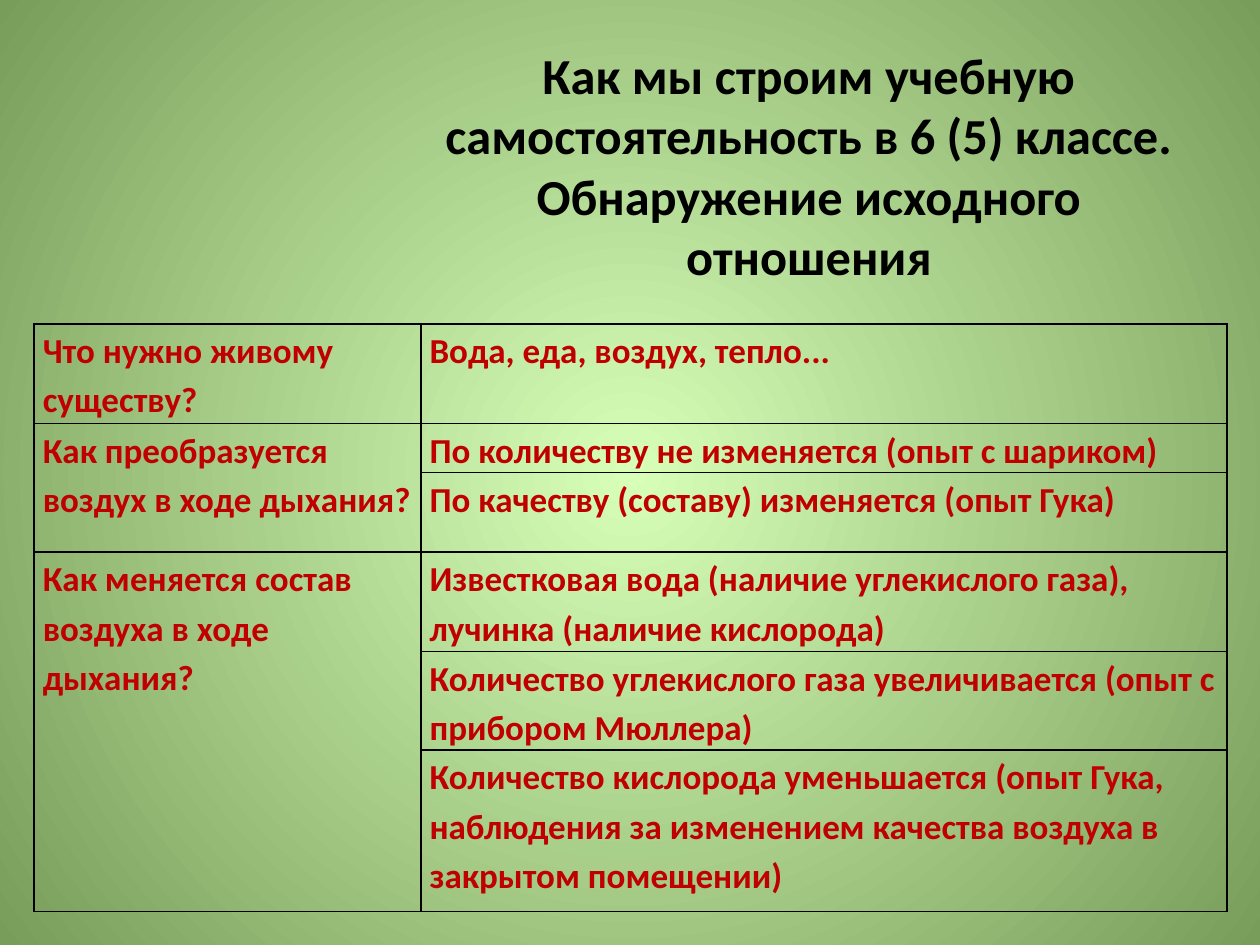
from lxml.etree import SubElement
from pptx import Presentation
from pptx.dml.color import RGBColor
from pptx.enum.text import MSO_ANCHOR, MSO_AUTO_SIZE, PP_ALIGN
from pptx.oxml.ns import qn
from pptx.util import Inches, Pt

COLORS = {"center": "D7FFB8", "edge": "789D5B", "title": "000000",
          "cell": "C00000", "border": "000000"}
FONT = "Calibri"
COL_WIDTHS = [3.07, 6.4]
ROW_HEIGHTS = [0.79, 0.39, 0.63, 0.79, 0.78, 1.28]
# Each question spans as many rows as it has answers.
TOPICS = [
    ("Что нужно живому существу?", ["Вода, еда, воздух, тепло..."]),
    ("Как преобразуется воздух в ходе дыхания?", [
        "По количеству не изменяется (опыт с шариком)",
        "По качеству (составу) изменяется (опыт Гука)"]),
    ("Как меняется состав воздуха в ходе дыхания?", [
        "Известковая вода (наличие углекислого газа), лучинка (наличие кислорода)",
        "Количество углекислого газа увеличивается (опыт с прибором Мюллера)",
        "Количество кислорода уменьшается (опыт Гука, наблюдения за изменением "
        "качества воздуха в закрытом помещении)"]),
]


def format_text(p, size, color):
    for r in p.runs:
        r.font.name = FONT
        r.font.size = Pt(size)
        r.font.bold = True
        r.font.color.rgb = RGBColor.from_string(COLORS[color])


def add_borders(cell):
    tc_pr = cell._tc.get_or_add_tcPr()
    for side in ("lnL", "lnR", "lnT", "lnB"):
        ln = SubElement(tc_pr, qn(f"a:{side}"), w=str(Pt(1)))
        fill = SubElement(ln, qn("a:solidFill"))
        SubElement(fill, qn("a:srgbClr"), val=COLORS["border"])


prs = Presentation()
prs.slide_width, prs.slide_height = Inches(10), Inches(7.5)
s = prs.slides.add_slide(prs.slide_layouts[5])

# Background: circular gradient from the slide's centre
fill = s.background.fill
fill.gradient()
for stop, name in zip(fill.gradient_stops, ("center", "edge")):
    stop.color.rgb = RGBColor.from_string(COLORS[name])
grad = next(s._element.iter(qn("a:gradFill")))
grad.remove(grad.find(qn("a:lin")))
circle = SubElement(grad, qn("a:path"), {"path": "circle"})
SubElement(circle, qn("a:fillToRect"), {side: "50000" for side in "ltrb"})

# Title
title = s.shapes.title
title.left, title.top = Inches(3.19), Inches(0.13)
title.width, title.height = Inches(6.46), Inches(2.36)
tf = title.text_frame
tf.text = ("Как мы строим учебную самостоятельность в 6 (5) классе.\v"
           "Обнаружение исходного отношения")
tf.word_wrap = True
tf.auto_size = MSO_AUTO_SIZE.NONE
tf.vertical_anchor = MSO_ANCHOR.MIDDLE
tf.paragraphs[0].alignment = PP_ALIGN.CENTER
format_text(tf.paragraphs[0], 28.8, "title")

# Table of questions and answers
table = s.shapes.add_table(
    len(ROW_HEIGHTS), len(COL_WIDTHS), Inches(0.27), Inches(2.57),
    Inches(sum(COL_WIDTHS)), Inches(sum(ROW_HEIGHTS))).table
table.first_row = table.horz_banding = False
for col, width in zip(table.columns, COL_WIDTHS):
    col.width = Inches(width)
for row, height in zip(table.rows, ROW_HEIGHTS):
    row.height = Inches(height)

top = 0
for question, answers in TOPICS:
    table.cell(top, 0).text = question
    for i, answer in enumerate(answers):
        table.cell(top + i, 1).text = answer
    if len(answers) > 1:
        table.cell(top, 0).merge(table.cell(top + len(answers) - 1, 0))
    top += len(answers)

for cell in table.iter_cells():
    add_borders(cell)
    cell.fill.background()
    cell.margin_left = cell.margin_right = Inches(0.07)
    cell.margin_top = cell.margin_bottom = 0
    p = cell.text_frame.paragraphs[0]
    p.line_spacing = 1.15
    format_text(p, 20, "cell")

prs.save("out.pptx")
